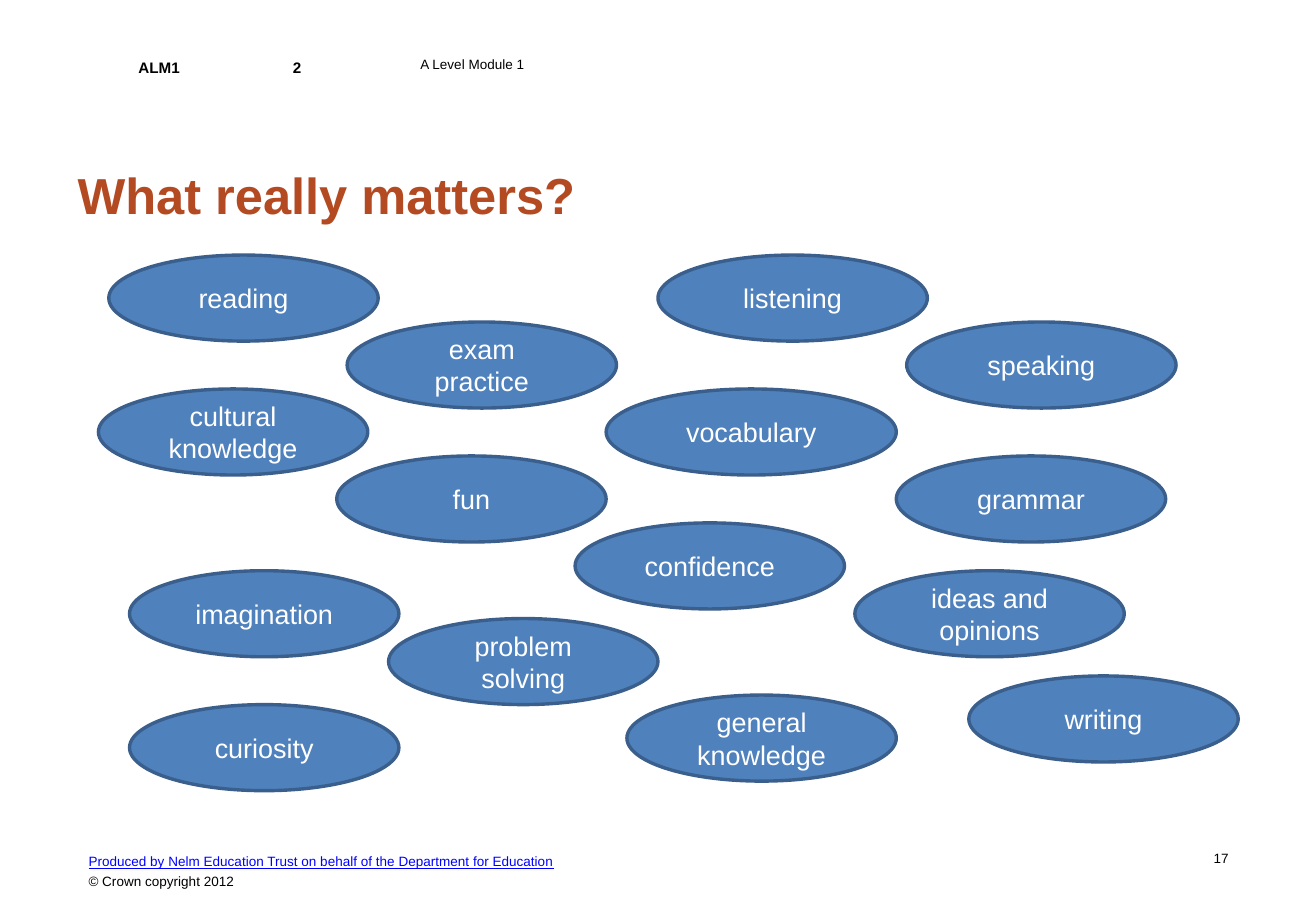
from pptx import Presentation
from pptx.dml.color import RGBColor
from pptx.enum.shapes import MSO_SHAPE
from pptx.enum.text import MSO_ANCHOR, PP_ALIGN
from pptx.util import Inches, Pt

OVAL = MSO_SHAPE.OVAL
MIDDLE = MSO_ANCHOR.MIDDLE
LEFT, CENTER, RIGHT = PP_ALIGN.LEFT, PP_ALIGN.CENTER, PP_ALIGN.RIGHT

BLACK, WHITE, LINK_BLUE = "000000", "FFFFFF", "0000FF"
RUST, OVAL_BLUE, OVAL_EDGE = "B34A22", "4F81BD", "3A5F8C"

HEADER_COLUMNS = [0.72, 0.55, 0.65, 0.4, 2.53]
HEADER_CELLS = [(0, "ALM1", 9, True), (2, "2", 9, True), (4, "A Level Module 1", 8, False)]

# Ideas sit on a fine grid: column, row, label
GRID_COLUMNS, GRID_ROWS = 110, 56
OVAL_COLUMNS, WIDE_OVAL_COLUMNS, OVAL_ROWS = 26, 28, 9
IDEAS = [
    (24, 7, "exam practice"),
    (23, 21, "fun"),
    (1, 0, "reading"),
    (84, 44, "writing"),
    (49, 14, "vocabulary"),
    (54, 0, "listening"),
    (77, 21, "grammar"),
    (78, 7, "speaking"),
    (0, 14, "cultural knowledge"),
    (28, 38, "problem solving"),
    (51, 46, "general knowledge"),
    (46, 28, "confidence"),
    (3, 33, "imagination"),
    (3, 47, "curiosity"),
    (73, 33, "ideas and opinions"),
]


def color(hex_string):
    return RGBColor.from_string(hex_string)


def write(paragraph, text, size, ink, align=LEFT, **styles):
    """Fill a paragraph with one run; styles are further font attributes."""
    paragraph.alignment = align
    run = paragraph.add_run()
    run.text = text
    run.font.color.rgb = color(ink)
    for name, value in {"name": "Arial", "size": Pt(size), **styles}.items():
        setattr(run.font, name, value)


def add_text_frame(slide, box):
    frame = slide.shapes.add_textbox(*map(Inches, box)).text_frame
    frame.word_wrap = True
    return frame


def add_header(slide, box):
    frame = slide.shapes.add_table(1, len(HEADER_COLUMNS), *map(Inches, box))
    table = frame.table
    table.first_row = table.horz_banding = False
    for column, width in zip(table.columns, HEADER_COLUMNS):
        column.width = Inches(width)
    margins = {"margin_left": 0.07, "margin_right": 0.07, "margin_top": 0, "margin_bottom": 0}
    for cell in table.iter_cells():
        cell.fill.background()
        cell.vertical_anchor = MIDDLE
        for name, value in margins.items():
            setattr(cell, name, Inches(value))
    for index, text, size, bold in HEADER_CELLS:
        paragraph = table.cell(0, index).text_frame.paragraphs[0]
        write(paragraph, text, size, BLACK, bold=bold)
        if bold:
            paragraph.line_spacing = Pt(14)
            paragraph.space_after = Pt(3.7)


def add_title(slide, box):
    heading = add_text_frame(slide, box).paragraphs[0]
    write(heading, "What really matters?", 30, RUST, bold=True)


def add_ideas(slide, box):
    left, top, width, height = box
    column, row = width / GRID_COLUMNS, height / GRID_ROWS
    for x, y, label in IDEAS:
        columns = WIDE_OVAL_COLUMNS if label == "vocabulary" else OVAL_COLUMNS
        place = (left + x * column, top + y * row, columns * column, OVAL_ROWS * row)
        idea = slide.shapes.add_shape(OVAL, *map(Inches, place))
        idea.shadow.inherit = False
        idea.fill.solid()
        idea.fill.fore_color.rgb = color(OVAL_BLUE)
        idea.line.color.rgb = color(OVAL_EDGE)
        idea.line.width = Pt(2)
        idea.text_frame.word_wrap = True
        idea.text_frame.vertical_anchor = MIDDLE
        write(idea.text_frame.paragraphs[0], label, 16, WHITE, CENTER)


def add_footer(slide, box):
    left, top, width, height = box
    number_width = 0.04 * width
    credit = add_text_frame(slide, (left, top, 0.68 * width, height))
    producer, rights = credit.paragraphs[0], credit.add_paragraph()
    write(producer, "Produced by Nelm Education Trust on behalf of the Department for Education",
          8, LINK_BLUE, underline=True)
    write(rights, "© Crown copyright 2012", 8, BLACK)
    for paragraph in credit.paragraphs:
        paragraph.line_spacing = 1.2
    number_box = (left + width - number_width, top, number_width, height)
    number = add_text_frame(slide, number_box)
    write(number.paragraphs[0], "17", 8, BLACK, RIGHT)


def main():
    deck = Presentation()
    deck.slide_width, deck.slide_height = Inches(10.83), Inches(7.5)
    slide = deck.slides.add_slide(deck.slide_layouts[6])
    add_header(slide, (1.07, 0.29, sum(HEADER_COLUMNS), 0.49))
    add_footer(slide, (0.63, 6.95, 9.58, 0.4))
    add_title(slide, (0.54, 1.3, 9.73, 0.8))
    add_ideas(slide, (0.81, 2.1, 9.38, 4.41))
    deck.save("out.pptx")


if __name__ == "__main__":
    main()
